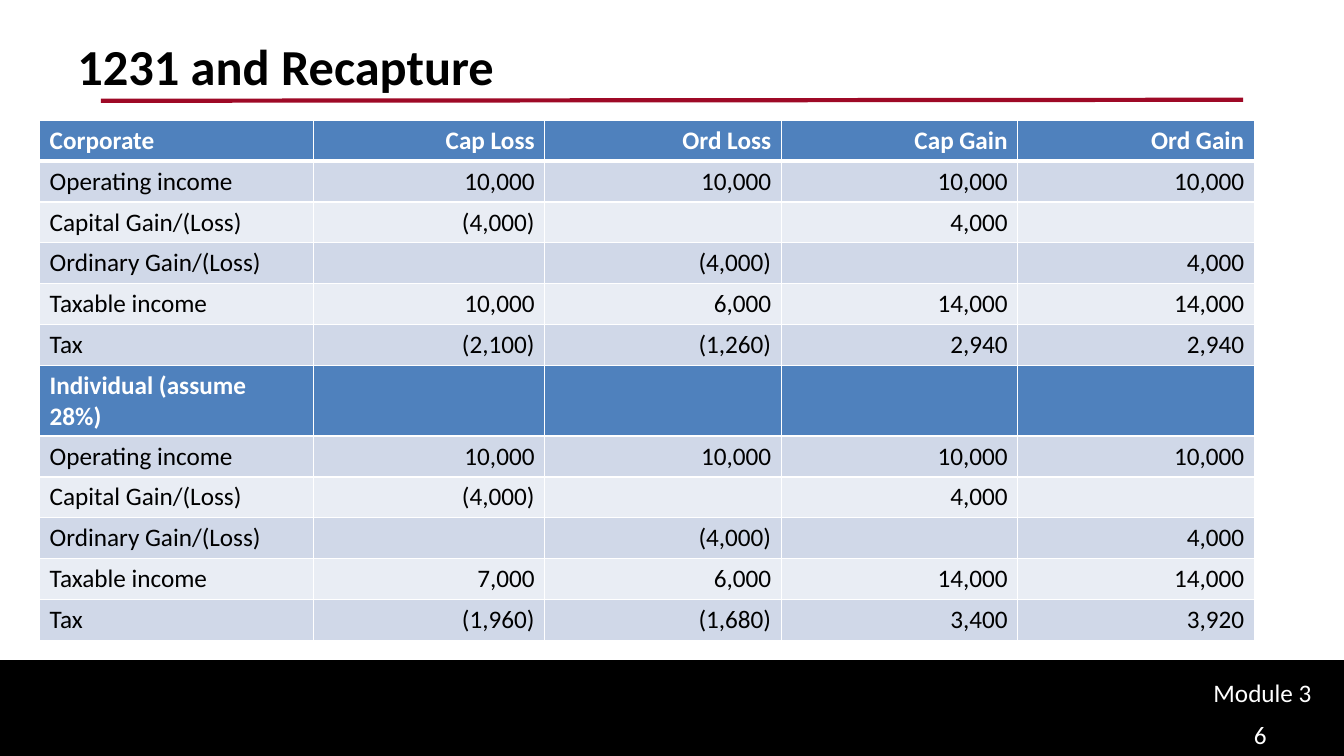
from dataclasses import dataclass

from lxml.etree import SubElement
from pptx import Presentation
from pptx.dml.color import RGBColor
from pptx.enum.shapes import MSO_CONNECTOR as Connector, MSO_SHAPE as Preset
from pptx.enum.text import MSO_ANCHOR as Anchor, PP_ALIGN as Align
from pptx.oxml import parse_xml
from pptx.oxml.ns import nsdecls, qn
from pptx.util import Emu, Inches, Pt

WIDTH, HEIGHT = Inches(13.33), Inches(7.5)
FONT = "Calibri"
BLACK, WHITE, CRIMSON = "000000", "FFFFFF", "9E0926"
HEADER, STRIPES = "4F81BD", ("D0D8E8", "E9EDF4")
COLUMNS = (20.4, 17.18, 17.6, 17.6, 17.6)
ROW_HEIGHT = 5.41


@dataclass(frozen=True)
class Area:
    """A rectangle in percent of the slide's width and height."""
    left: float
    top: float
    width: float
    height: float

    def frame(self) -> tuple:
        """Return left, top, width and height as lengths."""
        return across(self.left), down(self.top), across(self.width), down(self.height)


@dataclass(frozen=True)
class Label:
    """A short text in the footer band."""
    text: str
    area: Area


@dataclass(frozen=True)
class Section:
    """A headed block of table rows."""
    heading: tuple
    rows: tuple


LABELS = (
    Label("Module 3", Area(89.55, 88.93, 9.9, 5.33)),
    Label("6", Area(92.55, 94.27, 6.83, 5.73)),
)
SHARED_ROWS = (
    ("Operating income", "10,000", "10,000", "10,000", "10,000"),
    ("Capital Gain/(Loss)", "(4,000)", "", "4,000", ""),
    ("Ordinary Gain/(Loss)", "", "(4,000)", "", "4,000"),
)
SECTIONS = (
    Section(("Corporate", "Cap Loss", "Ord Loss", "Cap Gain", "Ord Gain"), SHARED_ROWS + (
        ("Taxable income", "10,000", "6,000", "14,000", "14,000"),
        ("Tax", "(2,100)", "(1,260)", "2,940", "2,940"),
    )),
    Section(("Individual (assume 28%)", "", "", "", ""), SHARED_ROWS + (
        ("Taxable income", "7,000", "6,000", "14,000", "14,000"),
        ("Tax", "(1,960)", "(1,680)", "3,400", "3,920"),
    )),
)


def across(percent: float) -> Emu:
    """Return a share of the slide's width."""
    return Emu(round(WIDTH * percent / 100))


def down(percent: float) -> Emu:
    """Return a share of the slide's height."""
    return Emu(round(HEIGHT * percent / 100))


def color(code: str) -> RGBColor:
    """Return the colour for a hex string."""
    return RGBColor.from_string(code)


def write(para, text: str, size: float, code: str, bold: bool = False) -> None:
    """Add one formatted run to a paragraph."""
    span = para.add_run()
    span.text = text
    span.font.name = FONT
    span.font.size = Pt(size)
    span.font.bold = bold
    span.font.color.rgb = color(code)


def draw_band(page) -> None:
    """Draw the black footer band."""
    band = page.shapes.add_shape(Preset.RECTANGLE, *Area(0, 87.47, 100, 12.53).frame())
    band.shadow.inherit = False
    band.fill.solid()
    band.fill.fore_color.rgb = color(BLACK)
    band.line.color.rgb = color(BLACK)
    band.line.width = Pt(2)


def draw_rule(page) -> None:
    """Draw the line under the title."""
    rule = page.shapes.add_connector(
        Connector.STRAIGHT, across(7.5), down(13.33), across(92.5), down(13.2))
    rule.line.color.rgb = color(CRIMSON)
    rule.line.width = Pt(3)
    SubElement(rule._element.spPr, qn("a:effectLst"))


def draw_title(page) -> None:
    """Place and fill the title placeholder."""
    title = page.shapes.title
    title.left, title.top, title.width, title.height = Area(5, 4, 90, 16.67).frame()
    title.text_frame.vertical_anchor = Anchor.TOP
    para = title.text_frame.paragraphs[0]
    para.alignment = Align.LEFT
    write(para, "1231 and Recapture", 36, BLACK, True)


def draw_label(page, label: Label) -> None:
    """Draw one footer label."""
    box = page.shapes.add_textbox(*label.area.frame())
    box.text_frame.word_wrap = True
    box.text_frame.vertical_anchor = Anchor.MIDDLE
    write(box.text_frame.paragraphs[0], label.text, 18, WHITE)


def set_borders(cell, top: float, bottom: float) -> None:
    """Give a cell white borders, one point wide at the sides."""
    properties = cell._tc.get_or_add_tcPr()
    sides = {"lnL": 1, "lnR": 1, "lnT": top, "lnB": bottom}
    for place, (side, width) in enumerate(sides.items()):
        properties.insert(place, parse_xml(
            f'<a:{side} {nsdecls("a")} w="{Pt(width)}"><a:solidFill>'
            f'<a:srgbClr val="{WHITE}"/></a:solidFill></a:{side}>'))


def draw_table(page) -> None:
    """Draw the tax comparison with its two sections."""
    lines = [(position, values) for section in SECTIONS
             for position, values in enumerate((section.heading, *section.rows))]
    area = Area(2.95, 15.9, sum(COLUMNS), ROW_HEIGHT * len(lines))
    table = page.shapes.add_table(len(lines), len(COLUMNS), *area.frame()).table
    for column, share in zip(table.columns, COLUMNS):
        column.width = across(share)
    for number, (position, values) in enumerate(lines):
        table.rows[number].height = down(ROW_HEIGHT)
        heading = position == 0
        fill = HEADER if heading else STRIPES[(position - 1) % 2]
        for index, text in enumerate(values):
            cell = table.cell(number, index)
            cell.fill.solid()
            cell.fill.fore_color.rgb = color(fill)
            set_borders(cell, 3 if number == 1 else 1, 3 if number == 0 else 1)
            para = cell.text_frame.paragraphs[0]
            para.alignment = Align.RIGHT if index else Align.LEFT
            if text:
                write(para, text, 18, WHITE if heading else BLACK, heading)


def main() -> None:
    """Build and save the slide."""
    deck = Presentation()
    deck.slide_width, deck.slide_height = WIDTH, HEIGHT
    page = deck.slides.add_slide(deck.slide_layouts[5])
    draw_band(page)
    draw_rule(page)
    draw_title(page)
    for label in LABELS:
        draw_label(page, label)
    draw_table(page)
    deck.save("out.pptx")


if __name__ == "__main__":
    main()
